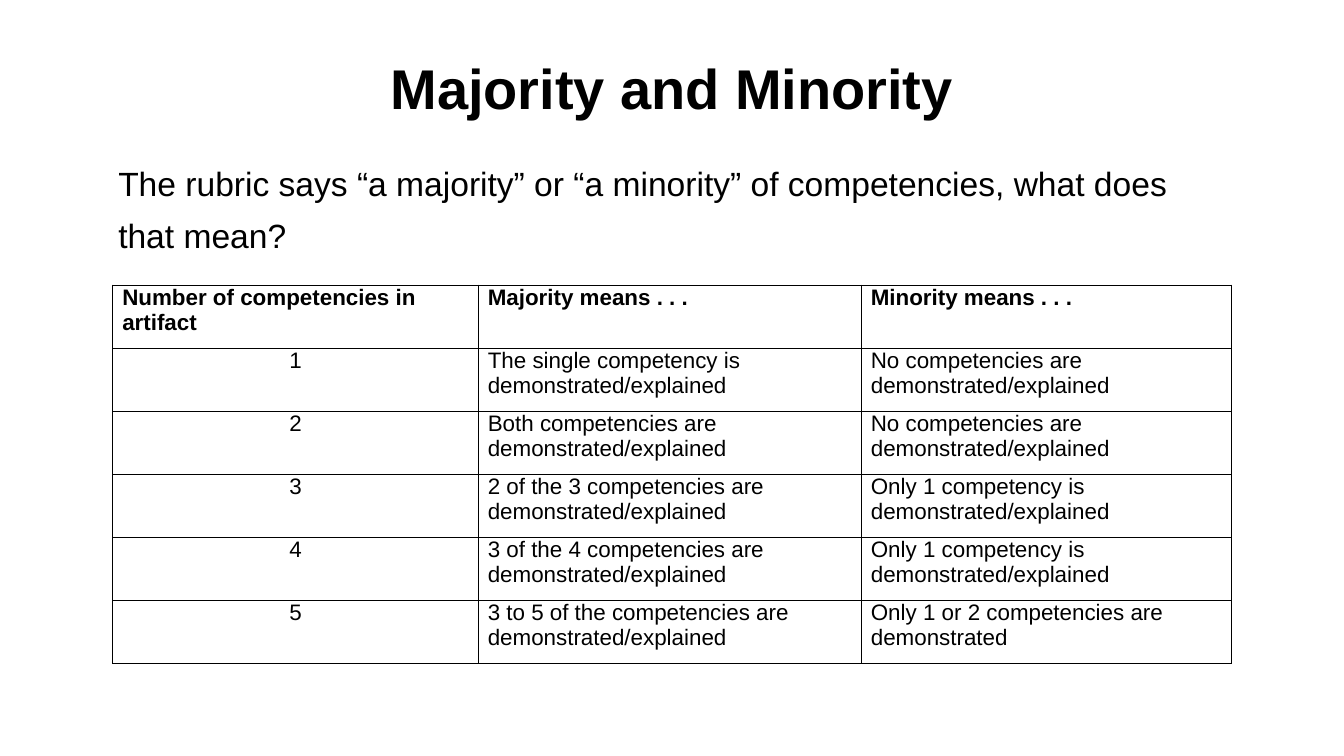
from dataclasses import dataclass

import lxml.etree
import pptx
import pptx.dml.color
import pptx.enum.text
import pptx.oxml.ns
import pptx.util

Inches = pptx.util.Inches
Pt = pptx.util.Pt
Align = pptx.enum.text.PP_ALIGN


@dataclass(frozen=True)
class Theme:
    font: str = "Arial"
    ink: str = "000000"
    paper: str = "FFFFFF"
    title_size: float = 30
    body_size: float = 18
    table_size: float = 12
    border_width: float = 0.5


THEME = Theme()
ROWS = [
    ("Number of competencies in artifact", "Majority means . . .", "Minority means . . ."),
    ("1", "The single competency is demonstrated/explained",
     "No competencies are demonstrated/explained"),
    ("2", "Both competencies are demonstrated/explained",
     "No competencies are demonstrated/explained"),
    ("3", "2 of the 3 competencies are demonstrated/explained",
     "Only 1 competency is demonstrated/explained"),
    ("4", "3 of the 4 competencies are demonstrated/explained",
     "Only 1 competency is demonstrated/explained"),
    ("5", "3 to 5 of the competencies are demonstrated/explained",
     "Only 1 or 2 competencies are demonstrated"),
]


def style_paragraph(paragraph, size, bold=False, align=Align.LEFT):
    paragraph.alignment = align
    font = paragraph.font
    font.name = THEME.font
    font.size = Pt(size)
    font.bold = bold
    font.color.rgb = pptx.dml.color.RGBColor.from_string(THEME.ink)


def fill_placeholder(shape, box, text):
    """Place a placeholder in box and return its one paragraph."""
    shape.left, shape.top, shape.width, shape.height = map(Inches, box)
    frame = shape.text_frame
    frame.word_wrap = True
    frame.auto_size = pptx.enum.text.MSO_AUTO_SIZE.NONE
    frame.vertical_anchor = pptx.enum.text.MSO_ANCHOR.TOP
    frame.margin_left = frame.margin_right = Inches(0.1)
    frame.margin_top = frame.margin_bottom = Inches(0.1)
    frame.text = text
    return frame.paragraphs[0]


def add_title(slide, box):
    paragraph = fill_placeholder(slide.shapes.title, box, "Majority and Minority")
    style_paragraph(paragraph, THEME.title_size, True, Align.CENTER)


def add_question(slide, box):
    paragraph = fill_placeholder(
        slide.placeholders[1], box,
        "The rubric says “a majority” or “a minority” of competencies, what does that mean?")
    style_paragraph(paragraph, THEME.body_size)
    paragraph.line_spacing = 1.3
    paragraph.space_before = Pt(10)
    properties = paragraph._p.get_or_add_pPr()
    properties.set("marL", "0")
    properties.set("indent", "0")
    bullet = lxml.etree.Element(pptx.oxml.ns.qn("a:buNone"))
    properties.find(pptx.oxml.ns.qn("a:defRPr")).addprevious(bullet)


def add_borders(cell):
    properties = cell._tc.get_or_add_tcPr()
    for side in ("lnL", "lnR", "lnT", "lnB"):
        line = lxml.etree.SubElement(properties, pptx.oxml.ns.qn(f"a:{side}"),
                                     w=str(Pt(THEME.border_width)))
        fill = lxml.etree.SubElement(line, pptx.oxml.ns.qn("a:solidFill"))
        lxml.etree.SubElement(fill, pptx.oxml.ns.qn("a:srgbClr"), val=THEME.ink)


def add_competency_table(slide, left, top, column_widths, row_height):
    frame = slide.shapes.add_table(
        len(ROWS), len(column_widths), Inches(left), Inches(top),
        Inches(sum(column_widths)), Inches(row_height * len(ROWS)))
    table = frame.table
    table.first_row = table.horz_banding = False
    for column, width in zip(table.columns, column_widths):
        column.width = Inches(width)
    for row_index, texts in enumerate(ROWS):
        table.rows[row_index].height = Inches(row_height)
        for column_index, text in enumerate(texts):
            cell = table.cell(row_index, column_index)
            cell.margin_left = cell.margin_right = Inches(0.07)
            cell.margin_top = cell.margin_bottom = 0
            cell.text = text
            is_header = row_index == 0
            is_count = column_index == 0 and not is_header
            style_paragraph(cell.text_frame.paragraphs[0], THEME.table_size, is_header,
                            Align.CENTER if is_count else Align.LEFT)
            add_borders(cell)
            cell.fill.background()


def main():
    presentation = pptx.Presentation()
    presentation.slide_width = Inches(10)
    presentation.slide_height = Inches(10 * 9 / 16)
    slide = presentation.slides.add_slide(presentation.slide_layouts[1])
    background = slide.background.fill
    background.solid()
    background.fore_color.rgb = pptx.dml.color.RGBColor.from_string(THEME.paper)
    add_title(slide, (0.34, 0.3, 9.32, 0.63))
    add_question(slide, (0.78, 1.02, 8.43, 1.15))
    add_competency_table(slide, 0.84, 2.12, (2.72, 2.85, 2.75), 0.47)
    presentation.save("out.pptx")


if __name__ == "__main__":
    main()
